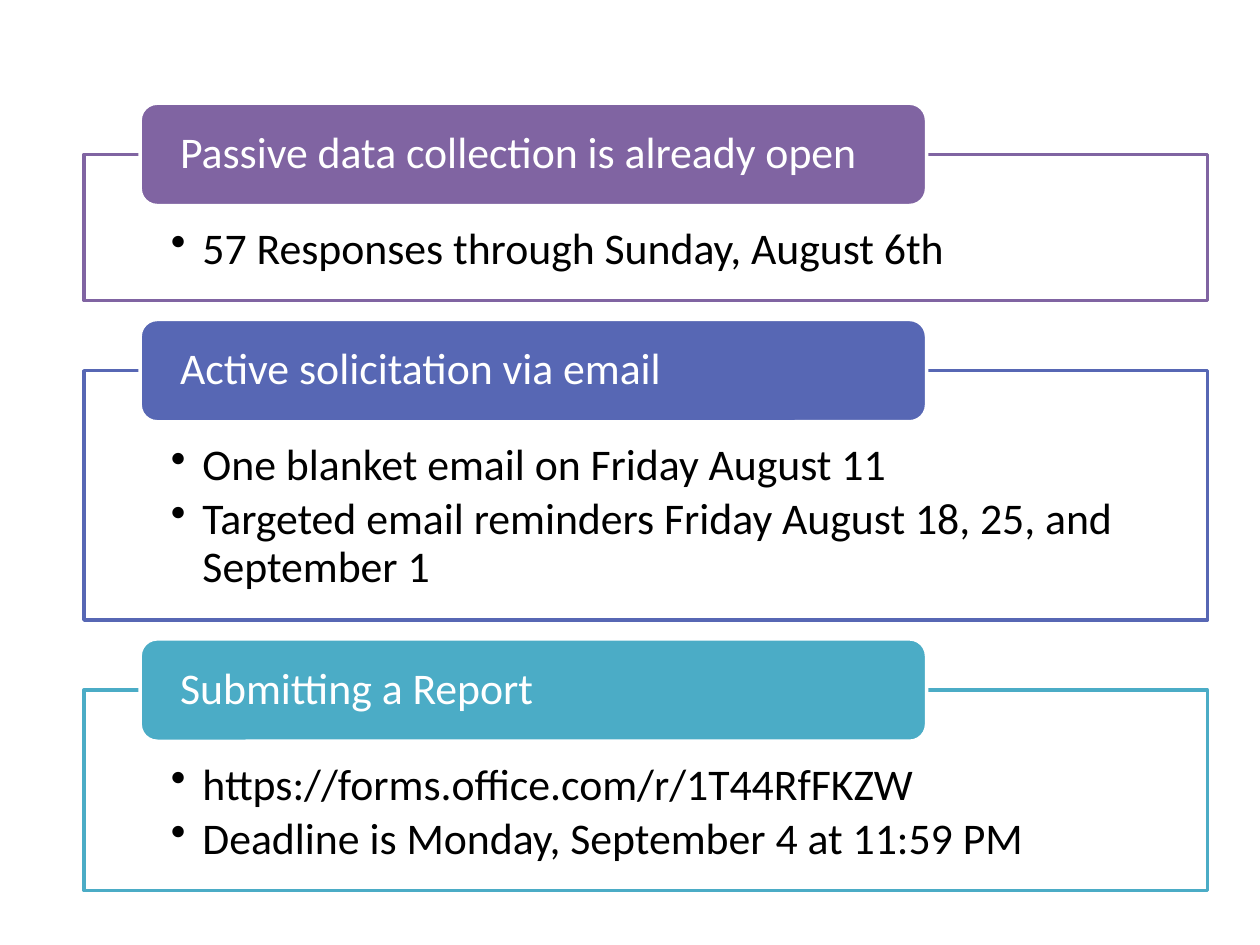
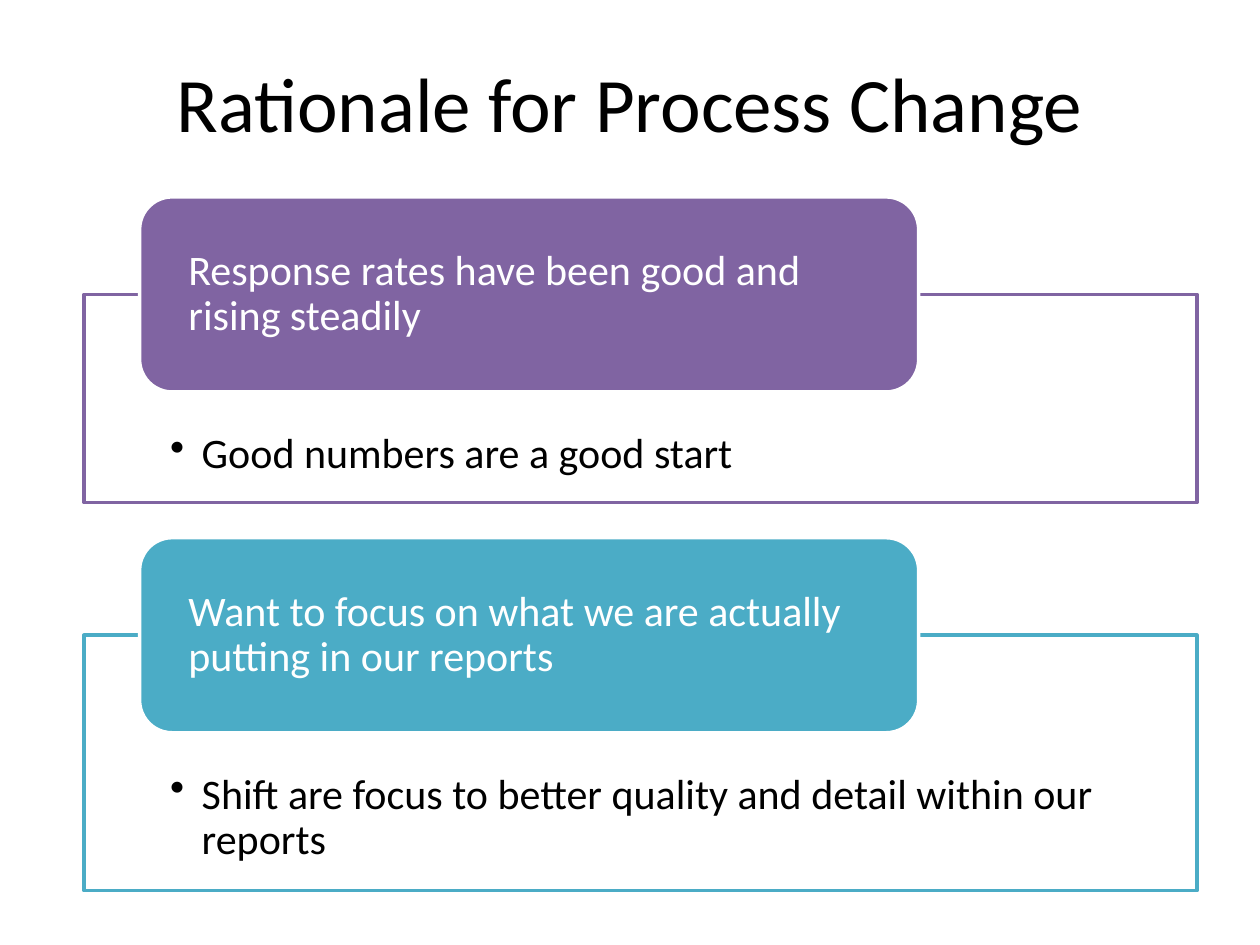
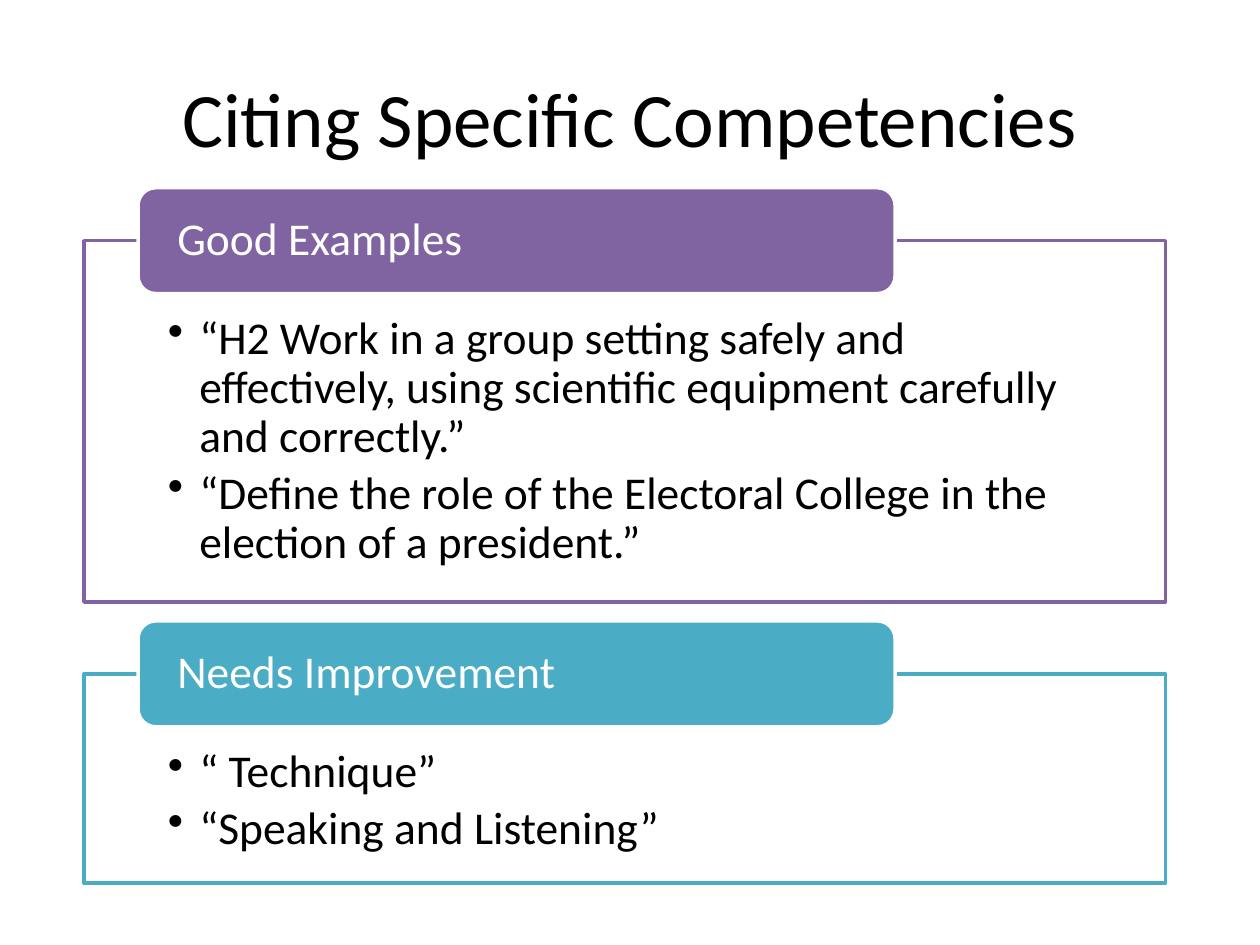
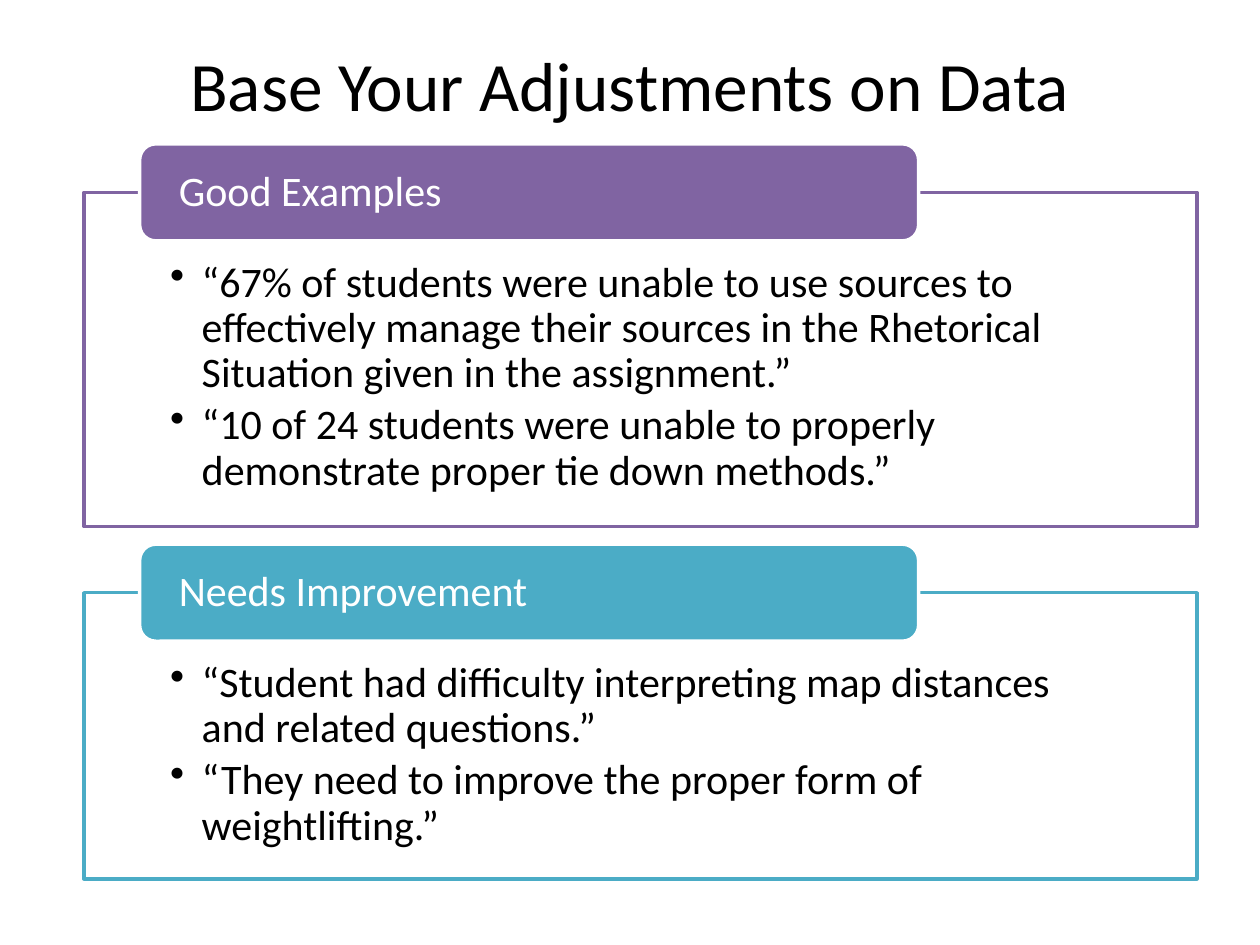
from lxml import etree
from pptx import Presentation
from pptx import util as u
from pptx.dml.color import RGBColor
from pptx.enum import shapes, text
from pptx.oxml.ns import qn

PURPLE, INDIGO, TEAL = "8064A2", "5767B4", "4BACC6"
WHITE, BLACK = "FFFFFF", "000000"


def color(value):
    return RGBColor.from_string(value)


class Deck:
    """Holds the deck style and the current page, and draws each kind of element."""

    font = "Calibri"
    left = 48
    bullet_indent = 18

    def __init__(self):
        self.deck = Presentation()
        self.deck.slide_width, self.deck.slide_height = u.Pt(720), u.Pt(540)
        self.page = None

    def add_page(self):
        self.page = self.deck.slides.add_slide(self.deck.slide_layouts[6])

    def add_span(self, para, words, size, ink):
        span = para.add_run()
        span.text = words
        span.font.name, span.font.size = self.font, u.Pt(size)
        span.font.color.rgb = color(ink)

    def title(self, words, top, height, size=44):
        box = self.page.shapes.add_textbox(u.Pt(36), u.Pt(top), u.Pt(648), u.Pt(height))
        frame = box.text_frame
        frame.word_wrap = True
        frame.vertical_anchor = text.MSO_ANCHOR.MIDDLE
        para = frame.paragraphs[0]
        para.alignment = text.PP_ALIGN.CENTER
        self.add_span(para, words, size, BLACK)

    def block(self, kind, place, fill, line, insets, anchor):
        box = self.page.shapes.add_shape(kind, *map(u.Pt, place))
        box.shadow.inherit = False
        box.fill.solid()
        box.fill.fore_color.rgb = color(fill)
        box.line.color.rgb = color(line)
        box.line.width = u.Pt(2)
        frame = box.text_frame
        frame.word_wrap = True
        frame.vertical_anchor = anchor
        (frame.margin_left, frame.margin_top,
         frame.margin_right, frame.margin_bottom) = map(u.Pt, insets)
        return box

    def bullet(self, para):
        props = para._p.get_or_add_pPr()
        props.set("marL", str(u.Pt(self.bullet_indent)))
        props.set("indent", str(-u.Pt(self.bullet_indent)))
        etree.SubElement(props, qn("a:buChar")).set("char", "•")

    def body(self, place, tint, label_height, size, items):
        side = 0.0775 * place[2]
        box = self.block(shapes.MSO_SHAPE.RECTANGLE, place, WHITE, tint,
                         (side, 0.705 * label_height, side, 0.56 * size),
                         text.MSO_ANCHOR.TOP)
        fill = box._element.spPr.find(qn("a:solidFill"))
        etree.SubElement(fill[0], qn("a:alpha")).set("val", "90000")
        frame = box.text_frame
        for index, words in enumerate(items):
            para = frame.add_paragraph() if index else frame.paragraphs[0]
            self.bullet(para)
            para.alignment = text.PP_ALIGN.LEFT
            para.line_spacing = 0.9
            para.space_after = u.Pt(0.16 * size)
            self.add_span(para, words, size, BLACK)

    def label(self, place, tint, size, words):
        side = 0.038 * place[2] + 0.05 * place[3]
        box = self.block(shapes.MSO_SHAPE.ROUNDED_RECTANGLE, place, tint, WHITE,
                         (side, 0, side, 0), text.MSO_ANCHOR.MIDDLE)
        para = box.text_frame.paragraphs[0]
        para.alignment = text.PP_ALIGN.LEFT
        para.line_spacing = 0.9
        self.add_span(para, words, size, WHITE)

    def panels(self, top, width, label_height, gap, size, panels):
        for tint, heading, height, items in panels:
            middle = top + label_height / 2
            self.body((self.left, middle, width, height), tint, label_height, size, items)
            self.label((self.left + 0.05 * width, top, 0.7 * width, label_height),
                       tint, size, heading)
            top = middle + height + gap


def main():
    deck = Deck()

    deck.add_page()
    deck.panels(59, 642, 58.5, 10.8, 25, [
        (PURPLE, "Passive data collection is already open", 83.5,
         ["57 Responses through Sunday, August 6th"]),
        (INDIGO, "Active solicitation via email", 142.5,
         ["One blanket email on Friday August 11",
          "Targeted email reminders Friday August 18, 25, and September 1"]),
        (TEAL, "Submitting a Report", 114.5,
         ["https://forms.office.com/r/1T44RfFKZW",
          "Deadline is Monday, September 4 at 11:59 PM"]),
    ])

    deck.add_page()
    deck.title("Rationale for Process Change", 13, 90)
    deck.panels(112.5, 636, 111.5, 20, 24, [
        (PURPLE, "Response rates have been good and rising steadily", 119,
         ["Good numbers are a good start"]),
        (TEAL, "Want to focus on what we are actually putting in our reports", 146,
         ["Shift are focus to better quality and detail within our reports"]),
    ])

    deck.add_page()
    deck.title("Citing Specific Competencies", 21.6, 90)
    deck.panels(107.3, 618, 60.5, 10.8, 26, [
        (PURPLE, "Good Examples", 206.5,
         ["“H2 Work in a group setting safely and effectively, using scientific "
          "equipment carefully and correctly.”",
          "“Define the role of the Electoral College in the election of a president.”"]),
        (TEAL, "Needs Improvement", 119.5,
         ["“ Technique”", "“Speaking and Listening”"]),
    ])

    deck.add_page()
    deck.title("Base Your Adjustments on Data", 21.6, 52.5, 39.6)
    deck.panels(82.2, 636, 55.5, 10, 24, [
        (PURPLE, "Good Examples", 191,
         ["“67% of students were unable to use sources to effectively manage their "
          "sources in the Rhetorical Situation given in the assignment.”",
          "“10 of 24 students were unable to properly demonstrate proper tie down "
          "methods.”"]),
        (TEAL, "Needs Improvement", 163.5,
         ["“Student had difficulty interpreting map distances and related questions.”",
          "“They need to improve the proper form of weightlifting.”"]),
    ])

    deck.deck.save("out.pptx")


if __name__ == "__main__":
    main()
